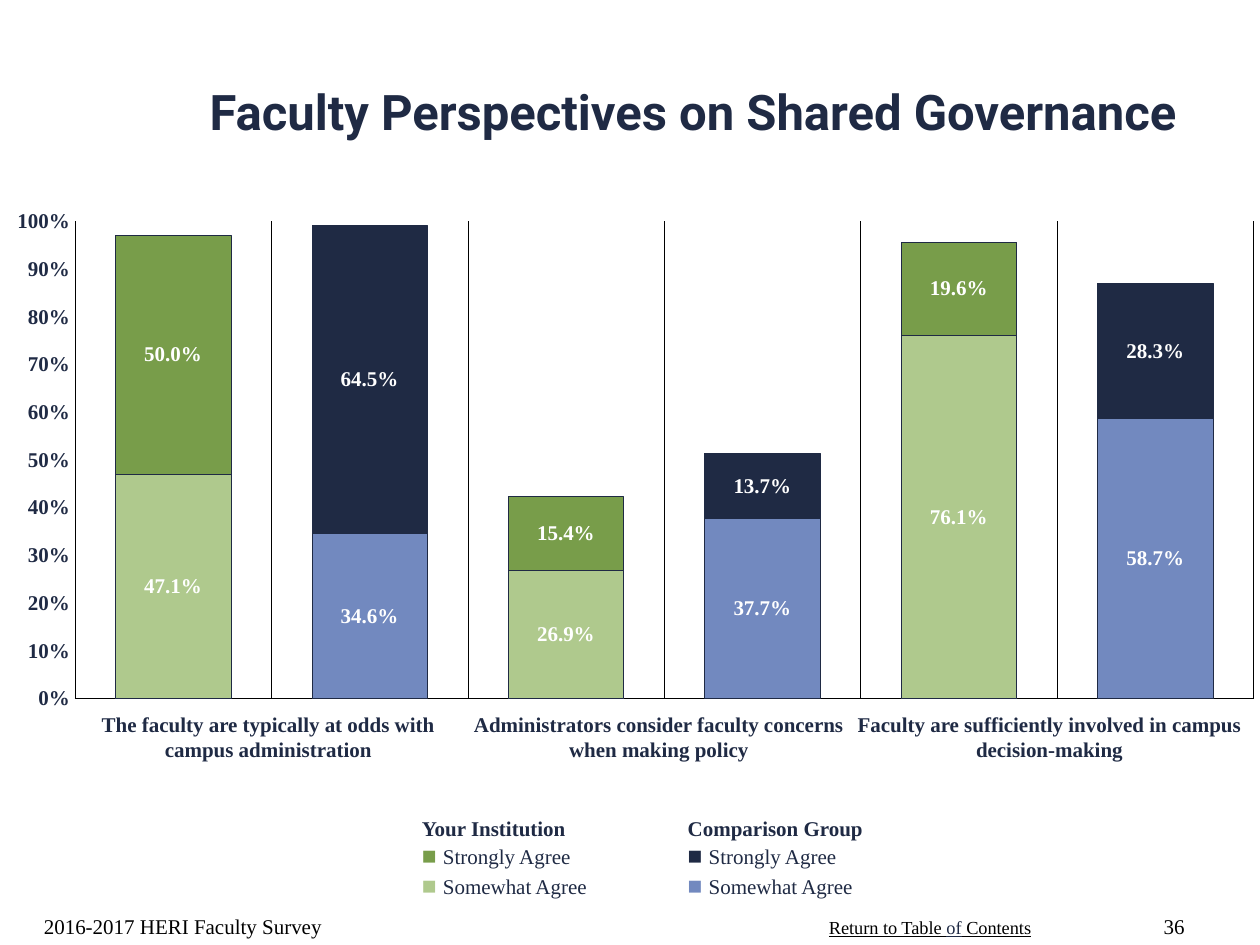
from typing import NamedTuple, Sequence

import pptx
import pptx.chart.data
import pptx.dml.color
import pptx.enum.chart
import pptx.enum.text
import pptx.oxml
import pptx.oxml.ns
import pptx.util

RGBColor = pptx.dml.color.RGBColor
Pt = pptx.util.Pt
PP_ALIGN = pptx.enum.text.PP_ALIGN
MSO_ANCHOR = pptx.enum.text.MSO_ANCHOR

NAVY = RGBColor(0x1F, 0x2A, 0x44)
BLUE = RGBColor(0x72, 0x89, 0xBF)
GREEN = RGBColor(0x78, 0x9D, 0x4A)
LIGHT_GREEN = RGBColor(0xAF, 0xC9, 0x8D)
BLACK = RGBColor(0, 0, 0)
WHITE = RGBColor(0xFF, 0xFF, 0xFF)

SERIF = "Times New Roman"
CELL = pptx.util.Inches(0.1)  # the slide is a grid of 100 columns and 75 rows
COLUMNS, ROWS = 100, 75


class Area(NamedTuple):
    """A place on the grid, in columns and rows."""
    column: float
    row: float
    columns: float
    rows: float

    def lengths(self) -> list[int]:
        return [round(cells * CELL) for cells in self]


class Run(NamedTuple):
    text: str
    size: float = 12
    color: RGBColor = NAVY
    bold: bool = False
    underline: bool = False
    font: str = SERIF


class AgreementLevel(NamedTuple):
    name: str
    values: Sequence[float]
    institution_color: RGBColor
    comparison_color: RGBColor


class LegendGroup(NamedTuple):
    heading: str
    colors: Sequence[RGBColor]


SOMEWHAT = AgreementLevel("Somewhat Agree", (0.471, 0.346, 0.269, 0.377, 0.761, 0.587),
                          LIGHT_GREEN, BLUE)
STRONGLY = AgreementLevel("Strongly Agree", (0.5, 0.645, 0.154, 0.137, 0.196, 0.283),
                          GREEN, NAVY)
LEVELS = (SOMEWHAT, STRONGLY)
LEGEND_LEVELS = (STRONGLY, SOMEWHAT)
LEGEND = (
    LegendGroup("Your Institution", [level.institution_color for level in LEGEND_LEVELS]),
    LegendGroup("Comparison Group", [level.comparison_color for level in LEGEND_LEVELS]),
)
STATEMENTS = (
    "The faculty are typically at odds with campus administration",
    "Administrators consider faculty concerns when making policy",
    "Faculty are sufficiently involved in campus decision-making",
)


def write_paragraph(paragraph, runs: Sequence[Run], alignment=PP_ALIGN.LEFT) -> None:
    paragraph.alignment = alignment
    for item in runs:
        run = paragraph.add_run()
        run.text = item.text
        run.font.name = item.font
        run.font.size = Pt(item.size)
        run.font.bold = item.bold
        run.font.underline = item.underline
        run.font.color.rgb = item.color


def add_text(slide, area: Area, paragraphs: Sequence[Sequence[Run]],
             alignment=PP_ALIGN.LEFT, anchor=MSO_ANCHOR.TOP, wrap: bool = True):
    shape = slide.shapes.add_textbox(*area.lengths())
    frame = shape.text_frame
    frame.word_wrap = wrap
    frame.vertical_anchor = anchor
    for index, runs in enumerate(paragraphs):
        paragraph = frame.add_paragraph() if index else frame.paragraphs[0]
        write_paragraph(paragraph, runs, alignment)
    return shape


def set_title(slide) -> None:
    title = slide.shapes.title
    title.left, title.top, title.width, title.height = Area(10, 1.7, 90, 14.2).lengths()
    title.text_frame.vertical_anchor = MSO_ANCHOR.MIDDLE
    title.text_frame.auto_size = pptx.enum.text.MSO_AUTO_SIZE.NONE
    write_paragraph(title.text_frame.paragraphs[0],
                    [Run("Faculty Perspectives on Shared Governance", 28, bold=True,
                         font="Roboto")], PP_ALIGN.CENTER)


def paint_bar(chart_format, color: RGBColor) -> None:
    chart_format.fill.solid()
    chart_format.fill.fore_color.rgb = color
    chart_format.line.color.rgb = NAVY
    chart_format.line.width = Pt(0.25)


def place_plot(chart, x: float, y: float, w: float, h: float) -> None:
    """Fix the inner plot area, in shares of the chart's size."""
    plot_area = chart.plots[0]._element.getparent()
    for old_layout in plot_area.findall(pptx.oxml.ns.qn("c:layout")):
        plot_area.remove(old_layout)
    places = "".join(f'<c:{name} val="{share}"/>'
                     for name, share in (("x", x), ("y", y), ("w", w), ("h", h)))
    plot_area.insert(0, pptx.oxml.parse_xml(
        f'<c:layout {pptx.oxml.ns.nsdecls("c")}><c:manualLayout>'
        '<c:layoutTarget val="inner"/><c:xMode val="edge"/><c:yMode val="edge"/>'
        f'{places}</c:manualLayout></c:layout>'))


def format_axes(chart) -> None:
    category_axis, value_axis = chart.category_axis, chart.value_axis
    category_axis.has_major_gridlines = True
    category_axis.tick_label_position = pptx.enum.chart.XL_TICK_LABEL_POSITION.NONE
    value_axis.has_major_gridlines = False
    value_axis.minimum_scale, value_axis.maximum_scale = 0, 1
    value_axis.major_unit = 0.1
    value_axis.tick_labels.number_format = "0%"
    value_axis.tick_labels.number_format_is_linked = False
    for axis in (category_axis, value_axis):
        axis.major_tick_mark = pptx.enum.chart.XL_TICK_MARK.NONE
        axis.minor_tick_mark = pptx.enum.chart.XL_TICK_MARK.NONE
    for part in (category_axis, value_axis, category_axis.major_gridlines):
        part.format.line.color.rgb = BLACK
        part.format.line.width = Pt(0.19)


def add_agreement_chart(slide) -> None:
    data = pptx.chart.data.CategoryChartData(number_format="0.0%")
    data.categories = ["1", "2", "3", "4", "5", "6"]
    for level in LEVELS:
        data.add_series(level.name, level.values)
    chart = slide.shapes.add_chart(pptx.enum.chart.XL_CHART_TYPE.COLUMN_STACKED,
                                   *Area(0.6, 16.4, 98.9, 40.6).lengths(), data).chart
    chart.has_legend = False
    chart.has_title = False
    chart.font.name, chart.font.size, chart.font.bold = SERIF, Pt(12), True
    chart.font.color.rgb = NAVY
    plot = chart.plots[0]
    plot.gap_width, plot.overlap = 70, 100
    plot.vary_by_categories = False
    for series, level in zip(plot.series, LEVELS):
        paint_bar(series.format, level.institution_color)
        for index in range(1, len(level.values), 2):
            paint_bar(series.points[index].format, level.comparison_color)
        labels = series.data_labels
        labels.show_value = True
        labels.number_format, labels.number_format_is_linked = "0.0%", False
        labels.position = pptx.enum.chart.XL_LABEL_POSITION.CENTER
        labels.font.name, labels.font.size, labels.font.bold = SERIF, Pt(12), True
        labels.font.color.rgb = WHITE
    format_axes(chart)
    place_plot(chart, 0.055, 0.029, 0.946, 0.933)


def add_statements(slide) -> None:
    for index, statement in enumerate(STATEMENTS):
        shape = add_text(slide, Area(5.8 + 31 * index, 56, 31, 5),
                         [[Run(statement, bold=True)]], PP_ALIGN.CENTER)
        shape.text_frame.margin_left = shape.text_frame.margin_right = 0


def add_legend(slide) -> None:
    for index, group in enumerate(LEGEND):
        entries = [[Run("■ ", 14, color), Run(level.name)]
                   for level, color in zip(LEGEND_LEVELS, group.colors)]
        add_text(slide, Area(32.5 + 21.1 * index, 64.2, 21.1, 8),
                 [[Run(group.heading, bold=True)], *entries])


def add_footer(slide) -> None:
    add_text(slide, Area(2.5, 70, 31.7, 5),
             [[Run("2016-2017 HERI Faculty Survey", color=BLACK)]],
             anchor=MSO_ANCHOR.BOTTOM)
    add_text(slide, Area(64.8, 72.2, 18.2, 2.8),
             [[Run(text, 10.5, color, underline=True) for text, color in
               (("Return to Table ", BLACK), ("of", NAVY), (" Contents", BLACK))]],
             wrap=False)
    add_text(slide, Area(90, 70, 5, 5), [[Run("36", color=BLACK)]],
             PP_ALIGN.RIGHT, MSO_ANCHOR.BOTTOM)


def main() -> None:
    presentation = pptx.Presentation()
    presentation.slide_width, presentation.slide_height = COLUMNS * CELL, ROWS * CELL
    slide = presentation.slides.add_slide(presentation.slide_layouts[5])
    set_title(slide)
    add_agreement_chart(slide)
    add_statements(slide)
    add_legend(slide)
    add_footer(slide)
    presentation.save("out.pptx")


if __name__ == "__main__":
    main()
